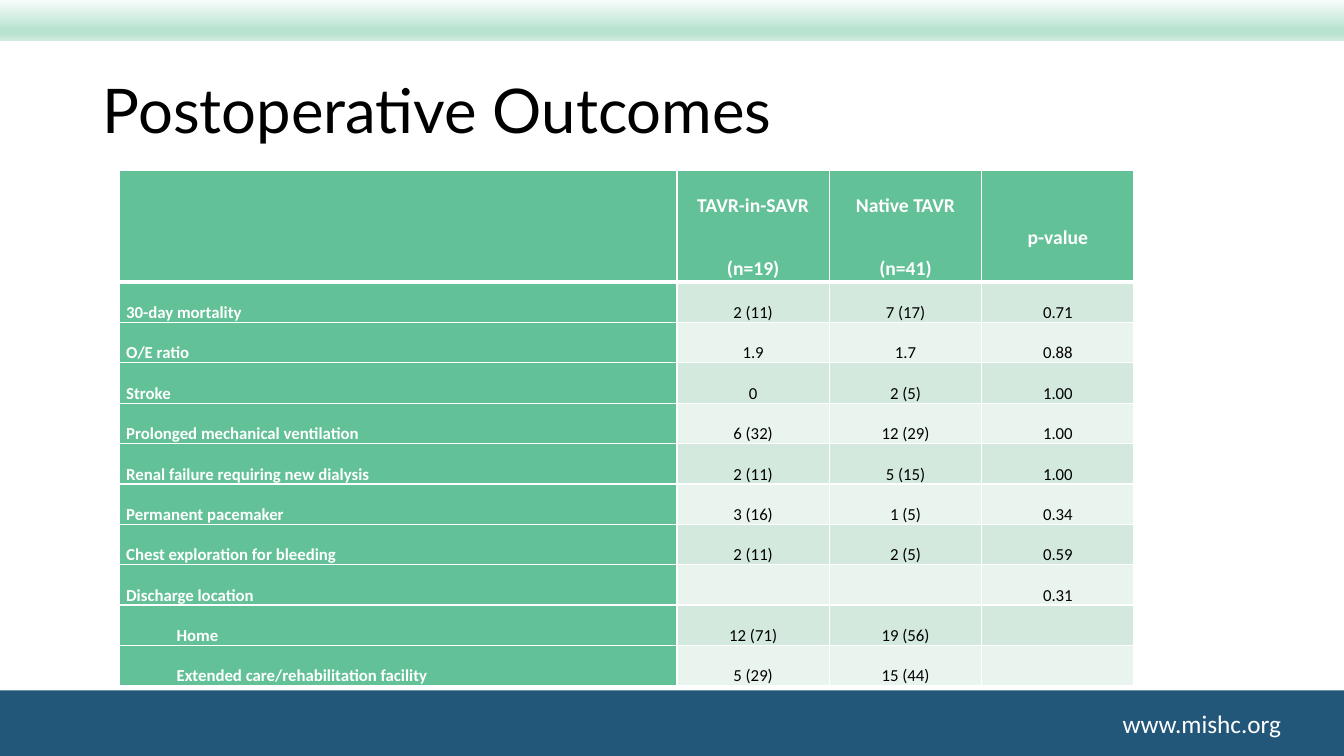
from lxml import etree
from pptx import Presentation
from pptx import util as u
from pptx.dml.color import RGBColor
from pptx.enum import shapes, text
from pptx.oxml import parse_xml
from pptx.oxml.ns import nsdecls, qn

WIDTH = 33.87
GREEN, WHITE, BLACK, NAVY = "62C196", "FFFFFF", "000000", "23577A"
BANDS = ("D3E9DD", "EAF4EF")
BANNER_STOPS = [(0, "F7FCFA"), (74, "B8E3D0"), (83, "B8E3D0"), (100, "D0ECE0")]
COLUMN_WIDTHS = (14.06, 3.84, 3.84, 3.84)
HEADER_HEIGHT, ROW_HEIGHT = 2.82, 0.96
HEADINGS = ["", "TAVR-in-SAVR\n(n=19)", "Native TAVR\n(n=41)", "p-value"]
OUTCOMES = [
    ("30-day mortality", "2 (11)", "7 (17)", "0.71"),
    ("O/E ratio", "1.9", "1.7", "0.88"),
    ("Stroke", "0", "2 (5)", "1.00"),
    ("Prolonged mechanical ventilation", "6 (32)", "12 (29)", "1.00"),
    ("Renal failure requiring new dialysis", "2 (11)", "5 (15)", "1.00"),
    ("Permanent pacemaker", "3 (16)", "1 (5)", "0.34"),
    ("Chest exploration for bleeding", "2 (11)", "2 (5)", "0.59"),
    ("Discharge location", "", "", "0.31"),
    ("Home", "12 (71)", "19 (56)", ""),
    ("Extended care/rehabilitation facility", "5 (29)", "15 (44)", ""),
]
DISCHARGE_PLACES = ("Home", "Extended care/rehabilitation facility")


def color(value):
    return RGBColor.from_string(value)


class OutcomesSlide:
    """Holds the slide and draws its elements; lengths are in centimetres."""

    body_font, title_font = "Calibri", "Lato"

    def __init__(self, slide):
        self.slide = slide

    def style(self, paragraph, font, size, ink, bold=False):
        for run in paragraph.runs:
            run.font.name, run.font.size = font, u.Pt(size)
            run.font.bold = bold
            run.font.color.rgb = color(ink)

    def band(self, top, height, fill):
        shape = self.slide.shapes.add_shape(
            shapes.MSO_SHAPE.RECTANGLE, 0, u.Cm(top), u.Cm(WIDTH), u.Cm(height))
        shape.shadow.inherit = False
        shape.fill.solid()
        shape.fill.fore_color.rgb = color(fill)
        shape.line.fill.background()
        return shape

    def gradient_band(self, top, height, stops):
        shape = self.band(top, height, stops[0][1])
        stop_xml = "".join(
            f'<a:gs pos="{position * 1000}"><a:srgbClr val="{value}"/></a:gs>'
            for position, value in stops)
        properties = shape.fill._xPr
        solid = properties.find(qn("a:solidFill"))
        properties.replace(solid, parse_xml(
            f'<a:gradFill {nsdecls("a")} rotWithShape="1"><a:gsLst>{stop_xml}</a:gsLst>'
            '<a:lin ang="5400000" scaled="0"/></a:gradFill>'))

    def label(self, words, box, font, size, ink, wrap=True):
        shape = self.slide.shapes.add_textbox(*(u.Cm(length) for length in box))
        frame = shape.text_frame
        frame.word_wrap = wrap
        frame.vertical_anchor = text.MSO_ANCHOR.MIDDLE
        frame.text = words
        self.style(frame.paragraphs[0], font, size, ink)
        return frame.paragraphs[0]

    def borders(self, cell, **widths):
        """Draw white cell edges; widths are points keyed by L, R, T and B."""
        properties = cell._tc.get_or_add_tcPr()
        for index, side in enumerate("LRTB"):
            line = etree.Element(qn(f"a:ln{side}"), w=str(u.Pt(widths.get(side, 1))))
            fill = etree.SubElement(line, qn("a:solidFill"))
            etree.SubElement(fill, qn("a:srgbClr"), val=WHITE)
            properties.insert(index, line)

    def cell(self, cell, words, fill, size, ink, bold, centered, middle):
        cell.fill.solid()
        cell.fill.fore_color.rgb = color(fill)
        cell.margin_left = cell.margin_right = u.Cm(0.18)
        cell.margin_top = cell.margin_bottom = 0
        cell.vertical_anchor = text.MSO_ANCHOR.MIDDLE if middle else text.MSO_ANCHOR.TOP
        if not words:
            return
        cell.text_frame.text = words
        for index, paragraph in enumerate(cell.text_frame.paragraphs):
            paragraph.alignment = text.PP_ALIGN.CENTER if centered else text.PP_ALIGN.LEFT
            paragraph.line_spacing = 2.0
            paragraph.space_before = u.Pt(3 if index else 0)
            paragraph.space_after = u.Pt(3 if index or middle else 8)
            if words in DISCHARGE_PLACES:
                paragraph._p.get_or_add_pPr().set("marL", str(u.Cm(1.27)))
            self.style(paragraph, self.body_font, size, ink, bold)

    def outcomes_table(self, left, top):
        rows = [HEADINGS, *OUTCOMES]
        height = HEADER_HEIGHT + ROW_HEIGHT * len(OUTCOMES)
        table = self.slide.shapes.add_table(
            len(rows), len(HEADINGS), u.Cm(left), u.Cm(top),
            u.Cm(sum(COLUMN_WIDTHS)), u.Cm(height)).table
        for column, width in zip(table.columns, COLUMN_WIDTHS):
            column.width = u.Cm(width)
        for row_index, values in enumerate(rows):
            header = row_index == 0
            table.rows[row_index].height = u.Cm(HEADER_HEIGHT if header else ROW_HEIGHT)
            for column_index, words in enumerate(values):
                strong = header or column_index == 0
                cell = table.cell(row_index, column_index)
                self.cell(cell, words,
                          fill=GREEN if strong else BANDS[(row_index - 1) % 2],
                          size=14 if header else 12,
                          ink=WHITE if strong else BLACK,
                          bold=strong,
                          centered=column_index > 0,
                          middle=column_index in (0, 3))
                self.borders(cell, B=3 if header else 1, T=3 if row_index == 1 else 1)


def main():
    presentation = Presentation()
    presentation.slide_width, presentation.slide_height = u.Cm(WIDTH), u.Cm(19.05)
    page = OutcomesSlide(presentation.slides.add_slide(presentation.slide_layouts[6]))
    page.band(17.4, 1.88, NAVY)
    page.gradient_band(0, 1.02, BANNER_STOPS)
    page.label("www.mishc.org", (28.04, 17.73, 4.55, 1.02),
               page.body_font, 18, WHITE, wrap=False)
    title = page.label("Postoperative Outcomes", (2.34, 1.02, 29.21, 3.68),
                       page.title_font, 44, BLACK)
    title.line_spacing = 0.9
    page.outcomes_table(3, 4.29)
    presentation.save("out.pptx")


if __name__ == "__main__":
    main()
